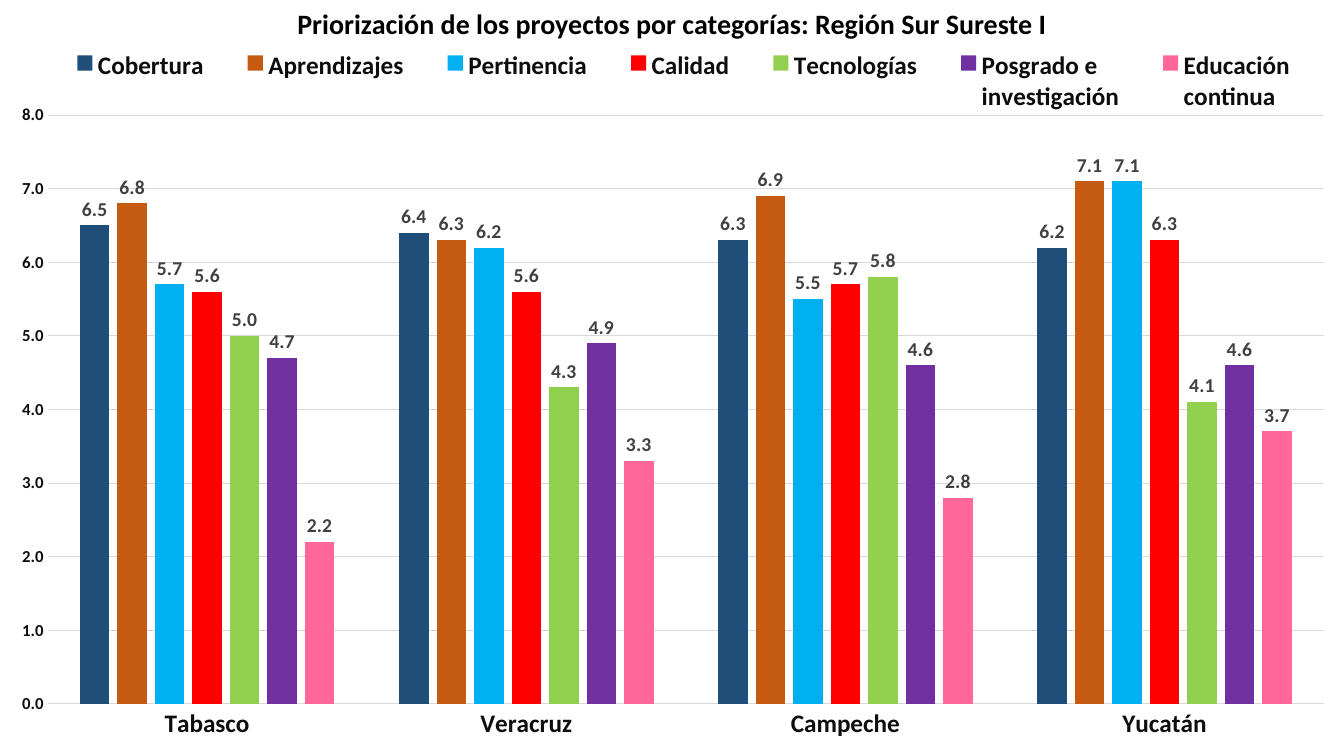
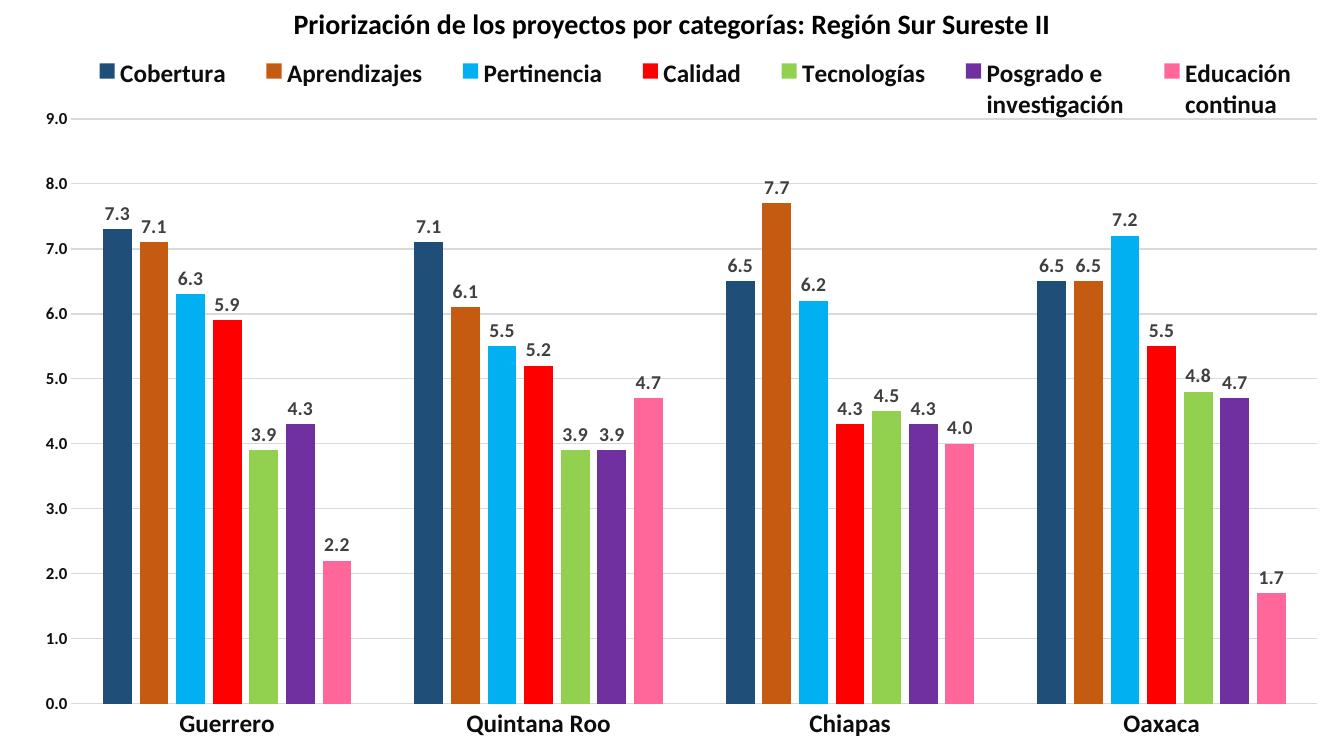
from lxml.etree import SubElement
from pptx import Presentation
from pptx.chart.data import CategoryChartData
from pptx.dml.color import RGBColor
from pptx.enum.chart import (XL_CHART_TYPE as ChartType, XL_LABEL_POSITION as LabelPosition,
                             XL_LEGEND_POSITION as LegendPosition, XL_TICK_MARK as TickMark)
from pptx.enum.text import PP_ALIGN as Align
from pptx.oxml import parse_xml
from pptx.oxml.ns import nsdecls, qn
from pptx.util import Cm, Pt

WIDTH, HEIGHT = 33.87, 19.05
CHART_TOP = 1.14
CHART_HEIGHT = HEIGHT - CHART_TOP
PLOT_BOTTOM = 16.6

PROJECT_COLOURS = {
    "Cobertura": "1F4E79",
    "Aprendizajes": "C55A11",
    "Pertinencia": "00B0F0",
    "Calidad": "FF0000",
    "Tecnologías": "92D050",
    "Posgrado e \ninvestigación": "7030A0",
    "Educación \ncontinua": "FF6699",
}

# Scores run in the order of PROJECT_COLOURS; boxes are in cm inside the chart.
REGIONS = [
    {
        "name": "Sur Sureste I",
        "scores": {
            "Tabasco": (6.5, 6.8, 5.7, 5.6, 5.0, 4.7, 2.2),
            "Veracruz": (6.4, 6.3, 6.2, 5.6, 4.3, 4.9, 3.3),
            "Campeche": (6.3, 6.9, 5.5, 5.7, 5.8, 4.6, 2.8),
            "Yucatán": (6.2, 7.1, 7.1, 6.3, 4.1, 4.6, 3.7),
        },
        "top_score": 8,
        "plot_box": (1.2, 1.76, 33.37, PLOT_BOTTOM),
        "legend_box": (1.05, 0, 33.55, 1.8),
    },
    {
        "name": "Sur Sureste II",
        "scores": {
            "Guerrero": (7.3, 7.1, 6.3, 5.9, 3.9, 4.3, 2.2),
            "Quintana Roo": (7.1, 6.1, 5.5, 5.2, 3.9, 3.9, 4.7),
            "Chiapas": (6.5, 7.7, 6.2, 4.3, 4.5, 4.3, 4.0),
            "Oaxaca": (6.5, 6.5, 7.2, 5.5, 4.8, 4.7, 1.7),
        },
        "top_score": 9,
        "plot_box": (1.8, 1.86, 33.2, PLOT_BOTTOM),
        "legend_box": (1.7, 0.2, 33.5, 2),
    },
]


def rgb(value):
    return RGBColor.from_string(value)


def assign(target, values):
    for attribute, value in values.items():
        setattr(target, attribute, value)


def manual_layout(box, inner=False):
    """Return a c:layout for a (left, top, right, bottom) box in cm."""
    left, top, right, bottom = box
    layout = parse_xml(f"<c:layout {nsdecls('c')}><c:manualLayout/></c:layout>")
    settings = {"layoutTarget": "inner"} if inner else {}
    settings |= {
        "xMode": "edge", "yMode": "edge",
        "x": left / WIDTH, "y": top / CHART_HEIGHT,
        "w": (right - left) / WIDTH, "h": (bottom - top) / CHART_HEIGHT,
    }
    for tag, value in settings.items():
        SubElement(layout[0], qn(f"c:{tag}"), val=str(value))
    return layout


class RegionDeck:
    FONT = "Calibri"
    BLACK, AXIS_TEXT, LABEL_TEXT, RULE = "000000", "0D0D0D", "404040", "D9D9D9"

    def __init__(self):
        self.deck = Presentation()
        assign(self.deck, {"slide_width": Cm(WIDTH), "slide_height": Cm(HEIGHT)})
        self.slide = None

    def new_slide(self):
        self.slide = self.deck.slides.add_slide(self.deck.slide_layouts[6])

    def style_font(self, font, size, colour, bold=True):
        assign(font, {"name": self.FONT, "size": Pt(size), "bold": bold})
        font.color.rgb = rgb(colour)

    def style_rule(self, line):
        line.width = Pt(0.75)
        line.color.rgb = rgb(self.RULE)

    def add_title(self, text):
        frame = self.slide.shapes.add_textbox(0, Cm(0.03), Cm(WIDTH), Cm(1.11)).text_frame
        frame.word_wrap = True
        heading = frame.paragraphs[0]
        heading.alignment = Align.CENTER
        run = heading.add_run()
        run.text = text
        self.style_font(run.font, 20, self.BLACK)

    def add_score_chart(self, scores, top_score, plot_box, legend_box):
        data = CategoryChartData(number_format="0.0")
        data.categories = list(scores)
        for project, values in zip(PROJECT_COLOURS, zip(*scores.values())):
            data.add_series(project, values)
        chart = self.slide.shapes.add_chart(
            ChartType.COLUMN_CLUSTERED, 0, Cm(CHART_TOP), Cm(WIDTH), Cm(CHART_HEIGHT), data).chart
        chart.has_title = False
        self.style_font(chart.font, 10, self.BLACK, bold=False)
        self.style_columns(chart, plot_box)
        self.style_axes(chart, top_score)
        self.style_legend(chart, legend_box)

    def style_columns(self, chart, box):
        columns = chart.plots[0]
        assign(columns, {"gap_width": 219, "overlap": -27,
                         "vary_by_categories": False, "has_data_labels": True})
        for series, colour in zip(columns.series, PROJECT_COLOURS.values()):
            series.format.fill.solid()
            series.format.fill.fore_color.rgb = rgb(colour)
        assign(columns.data_labels, {
            "show_value": True, "number_format": "0.0",
            "number_format_is_linked": False, "position": LabelPosition.OUTSIDE_END})
        self.style_font(columns.data_labels.font, 14, self.LABEL_TEXT)
        area = chart._chartSpace.xpath("c:chart/c:plotArea")[0]
        for old in area.findall(qn("c:layout")):
            area.remove(old)
        area.insert(0, manual_layout(box, inner=True))

    def style_axes(self, chart, top_score):
        states, scale = chart.category_axis, chart.value_axis
        for axis, size in ((states, 18), (scale, 12)):
            assign(axis, {"major_tick_mark": TickMark.NONE, "minor_tick_mark": TickMark.NONE})
            self.style_font(axis.tick_labels.font, size, self.AXIS_TEXT)
        self.style_rule(states.format.line)
        assign(scale, {"minimum_scale": 0, "maximum_scale": top_score,
                       "major_unit": 1, "has_major_gridlines": True})
        self.style_rule(scale.major_gridlines.format.line)
        scale.format.line.fill.background()
        assign(scale.tick_labels, {"number_format": "0.0", "number_format_is_linked": False})

    def style_legend(self, chart, box):
        chart.has_legend = True
        legend = chart.legend
        assign(legend, {"position": LegendPosition.BOTTOM, "include_in_layout": False})
        self.style_font(legend.font, 18, self.AXIS_TEXT)
        element = legend._element
        for old in element.findall(qn("c:layout")):
            element.remove(old)
        element.find(qn("c:legendPos")).addnext(manual_layout(box))


def main():
    regions = RegionDeck()
    for region in REGIONS:
        regions.new_slide()
        regions.add_title(f"Priorización de los proyectos por categorías: Región {region['name']}")
        regions.add_score_chart(region["scores"], region["top_score"],
                                region["plot_box"], region["legend_box"])
    regions.deck.save("out.pptx")


if __name__ == "__main__":
    main()
